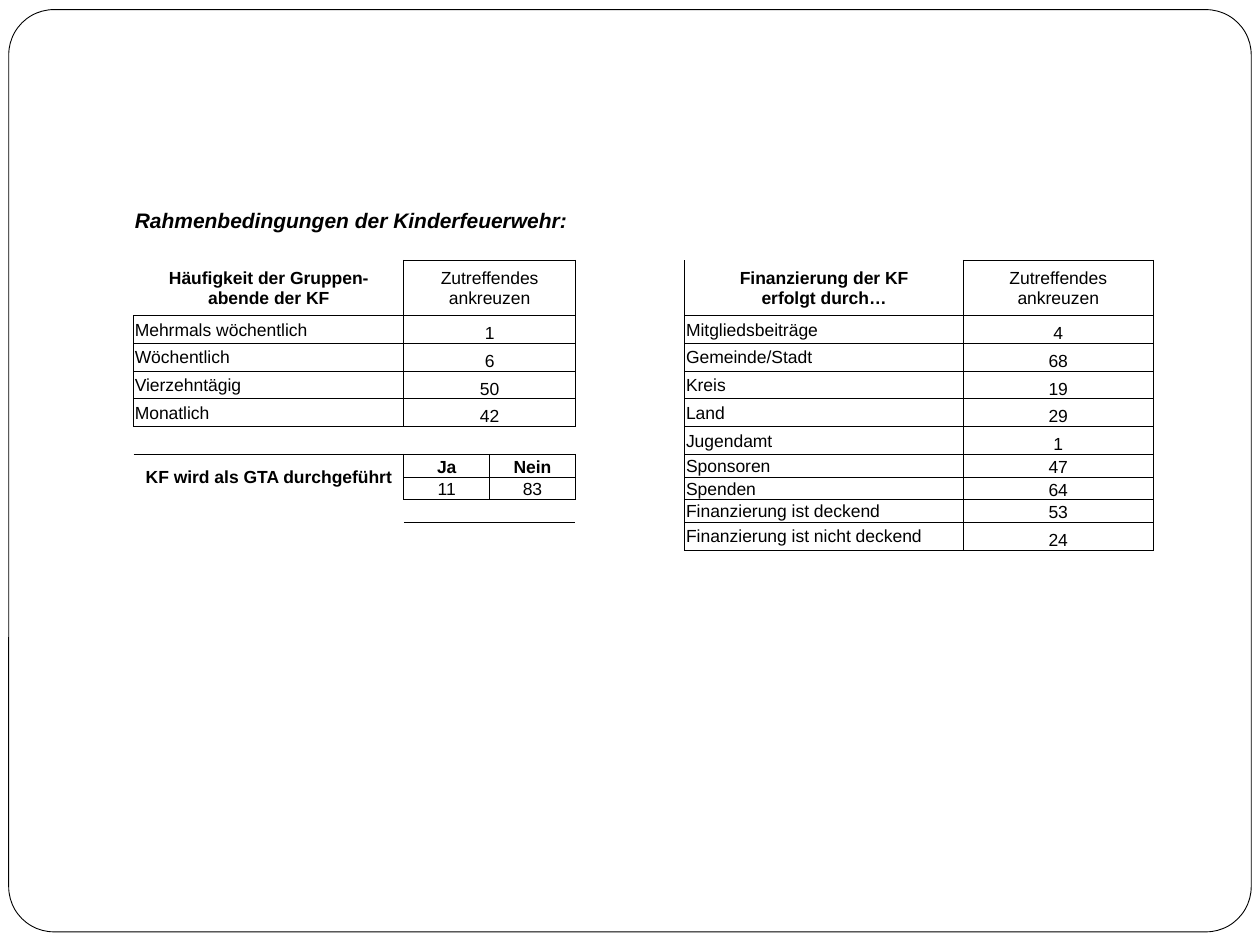
from itertools import product

from lxml.etree import SubElement
from pptx import Presentation
from pptx.dml.color import RGBColor
from pptx.enum.shapes import MSO_SHAPE
from pptx.enum.text import MSO_ANCHOR, PP_ALIGN
from pptx.oxml.ns import qn
from pptx.util import Pt

BLACK, WHITE = "000000", "FFFFFF"
LINE_WIDTH = 0.5
NO_STYLE = "{2D5ABB26-0587-4C30-8999-92F81FD0307C}"

COLUMNS = [105.5, 49, 49, 49, 62.6, 52.3, 52.3, 54.5, 54.3, 54.3]
ROWS = [15.85] * 9 + [13] * 3 + [15.85]
FREQUENCY = [("Mehrmals wöchentlich", 1), ("Wöchentlich", 6),
             ("Vierzehntägig", 50), ("Monatlich", 42)]
FUNDING = [("Mitgliedsbeiträge", 4), ("Gemeinde/Stadt", 68), ("Kreis", 19),
           ("Land", 29), ("Jugendamt", 1), ("Sponsoren", 47), ("Spenden", 64),
           ("Finanzierung ist deckend", 53),
           ("Finanzierung ist nicht deckend", 24)]

BOLD = {"bold": True}
MIDDLE, BOTTOM = MSO_ANCHOR.MIDDLE, MSO_ANCHOR.BOTTOM
LEFT, CENTER = PP_ALIGN.LEFT, PP_ALIGN.CENTER
# side: (row step, column step, opposite side), in the order the file needs
SIDES = {"L": (0, -1, "R"), "R": (0, 1, "L"), "T": (-1, 0, "B"), "B": (1, 0, "T")}


def color(value):
    return RGBColor.from_string(value)


def add_frame(page, left, top, width, height):
    """Rounded border around the page."""
    frame = page.shapes.add_shape(MSO_SHAPE.ROUNDED_RECTANGLE,
                                  Pt(left), Pt(top), Pt(width), Pt(height))
    frame.adjustments[0] = 0.049
    frame.shadow.inherit = False
    frame.fill.solid()
    frame.fill.fore_color.rgb = color(WHITE)
    frame.line.color.rgb = color(BLACK)
    frame.line.width = Pt(LINE_WIDTH)


def write_cell(cell, text, align, anchor, font):
    cell.vertical_anchor = anchor
    para = cell.text_frame.paragraphs[0]
    para.alignment = align
    for index, line in enumerate(text.split("\n")):
        if index:
            para.add_line_break()
        span = para.add_run()
        span.text = line
        settings = {"name": "Arial", "size": Pt(10), "bold": False, **font}
        for name, value in settings.items():
            setattr(span.font, name, value)
        span.font.color.rgb = color(BLACK)
    # Line breaks take the body size too
    for line_break in para._p.findall(qn("a:br")):
        SubElement(line_break, qn("a:rPr"), sz="1000")


def draw_borders(table, edges):
    for row, column in product(range(len(ROWS)), range(len(COLUMNS))):
        cell = table.cell(row, column)
        props = cell._tc.get_or_add_tcPr()
        for side in SIDES:
            if (row, column, side) in edges:
                line = SubElement(props, qn(f"a:ln{side}"), w=str(Pt(LINE_WIDTH)))
                fill = SubElement(line, qn("a:solidFill"))
                SubElement(fill, qn("a:srgbClr"), val=BLACK)
        cell.fill.background()


def add_survey(page, left, top):
    """One grid that holds the title and the three answer blocks."""
    holder = page.shapes.add_table(len(ROWS), len(COLUMNS), Pt(left), Pt(top),
                                   Pt(sum(COLUMNS)), Pt(sum(ROWS)))
    table = holder.table
    table.first_row = table.horz_banding = False
    table._tbl.tblPr.find(qn("a:tableStyleId")).text = NO_STYLE
    for column, width in zip(table.columns, COLUMNS):
        column.width = Pt(width)
    for row, height in zip(table.rows, ROWS):
        row.height = Pt(height)
    for cell in table.iter_cells():
        cell.margin_left = cell.margin_right = cell.margin_top = Pt(0.72)
        cell.margin_bottom = 0
        SubElement(cell.text_frame.paragraphs[0]._p, qn("a:endParaRPr"), sz="1000")
    edges = set()

    def put(row, column, rows, columns, text, align=CENTER, anchor=MIDDLE,
            font={}, boxed=True):
        cell = table.cell(row, column)
        if rows * columns > 1:
            cell.merge(table.cell(row + rows - 1, column + columns - 1))
        write_cell(cell, text, align, anchor, font)
        if boxed:
            for r, c in product(range(row, row + rows),
                                range(column, column + columns)):
                for side, (down, right, opposite) in SIDES.items():
                    edges.add((r, c, side))
                    edges.add((r + down, c + right, opposite))

    def put_block(column, label_span, heading, answers):
        value_column = column + label_span
        put(2, column, 2, label_span, heading, font=BOLD, boxed=False)
        put(2, value_column, 2, 2, "Zutreffendes\nankreuzen")
        for row, (label, value) in enumerate(answers, 4):
            put(row, column, 1, label_span, label, LEFT)
            put(row, value_column, 1, 2, str(value), anchor=BOTTOM)

    # Title
    put(0, 0, 1, 4, "Rahmenbedingungen der Kinderfeuerwehr:", LEFT, BOTTOM,
        {"size": Pt(12), "bold": True, "italic": True}, boxed=False)
    # Group evenings and funding
    put_block(0, 2, "Häufigkeit der Gruppen-\nabende der KF", FREQUENCY)
    put_block(5, 3, "Finanzierung der KF\nerfolgt durch…", FUNDING)
    # Yes and no
    put(9, 0, 2, 2, "KF wird als GTA durchgeführt", font=BOLD, boxed=False)
    for column, (answer, count) in enumerate([("Ja", 11), ("Nein", 83)], 2):
        put(9, column, 1, 1, answer, anchor=BOTTOM, font=BOLD)
        put(10, column, 1, 1, str(count))
    draw_borders(table, edges)


def main():
    deck = Presentation()
    deck.slide_width, deck.slide_height = Pt(720), Pt(540)
    page = deck.slides.add_slide(deck.slide_layouts[6])
    add_frame(page, 5, 5.5, 710, 527)
    add_survey(page, 76.3, 117)
    deck.save("out.pptx")


if __name__ == "__main__":
    main()
